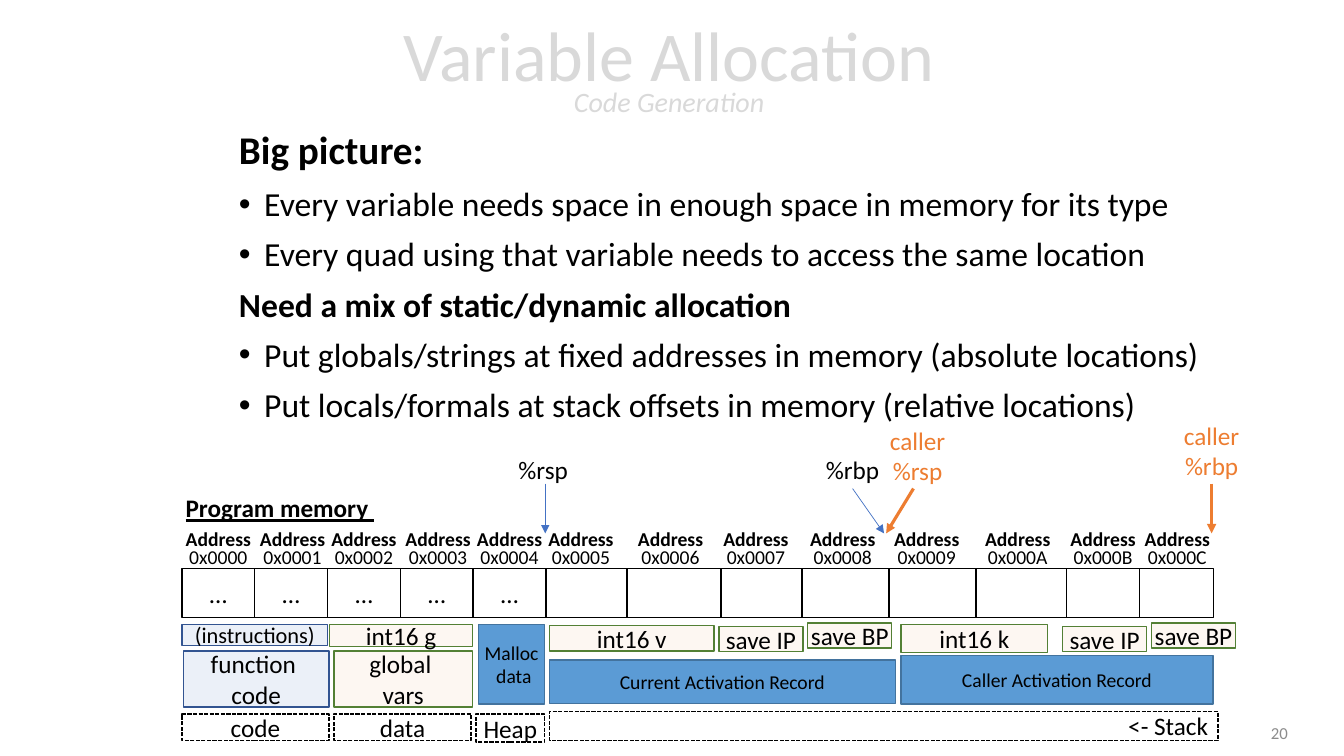
from dataclasses import dataclass

from lxml import etree
from pptx import Presentation
from pptx.dml.color import RGBColor
from pptx.enum.dml import MSO_LINE
from pptx.enum.shapes import MSO_CONNECTOR, MSO_SHAPE
from pptx.enum.text import MSO_ANCHOR, MSO_AUTO_SIZE, PP_ALIGN
from pptx.oxml.ns import qn
from pptx.util import Pt

LEFT, CENTER, RIGHT = PP_ALIGN.LEFT, PP_ALIGN.CENTER, PP_ALIGN.RIGHT
TOP, MIDDLE = MSO_ANCHOR.TOP, MSO_ANCHOR.MIDDLE
RECTANGLE, STRAIGHT = MSO_SHAPE.RECTANGLE, MSO_CONNECTOR.STRAIGHT
DASHED, FIXED_SIZE = MSO_LINE.SQUARE_DOT, MSO_AUTO_SIZE.NONE


@dataclass(frozen=True)
class Theme:
    """Hold the font, colours and type sizes of the slide."""
    font: str = "Calibri"
    ink: str = "000000"
    white: str = "FFFFFF"
    faded: str = "D9D9D9"
    number: str = "8C8C8C"
    blue: str = "4472C4"
    orange: str = "ED7D31"
    title: int = 50
    subtitle: int = 20
    heading: int = 28
    body: int = 24
    label: int = 18
    code: int = 16
    small: int = 14
    footer: int = 12


THEME = Theme()

STYLES = {
    "cell": (THEME.white, 100, THEME.ink),
    "code": (THEME.blue, 10, "325491"),
    "data": ("F4B183", 10, "538035"),
    "record": ("5B9BD5", 100, "43739E"),
    "segment": (None, 100, THEME.ink),
}

BODY = [
    ("Big picture:", True, THEME.heading),
    ("Every variable needs space in enough space in memory for its type", False, THEME.body),
    ("Every quad using that variable needs to access the same location", False, THEME.body),
    ("Need a mix of static/dynamic allocation", True, THEME.body),
    ("Put globals/strings at fixed addresses in memory (absolute locations)", False, THEME.body),
    ("Put locals/formals at stack offsets in memory (relative locations)", False, THEME.body),
]

CELL_EDGES = [130, 182, 234, 286, 338, 390, 448, 515, 573, 635, 697, 762, 814, 867]
ADDRESS_CENTERS = [156, 209, 260, 313, 364, 415, 479, 540, 602, 662, 727, 788, 841]
FILLED_CELLS = 5

MEMORY_BOXES = [
    ("code", "(instructions)", (130, 446, 104, 15), THEME.code),
    ("code", "function \ncode", (131, 465, 104, 40), THEME.label),
    ("data", "int16 g", (235.5, 446, 102, 16), THEME.label),
    ("data", "global \nvars", (238.5, 465, 99, 40), THEME.label),
    ("record", "Malloc\n data", (342, 446, 47, 57), THEME.small),
    ("record", "Current Activation Record", (392.5, 471.5, 247, 31), THEME.small),
    ("record", "Caller Activation Record", (643.5, 468, 223, 35), THEME.small),
    ("data", "int16 v", (392.5, 447, 117.5, 18), THEME.label),
    ("data", "int16 k", (643.5, 446, 105, 20), THEME.label),
    ("segment", "code", (130, 510, 105, 19), THEME.label),
    ("segment", "data", (238.5, 510, 98, 19), THEME.label),
    ("segment", "Heap", (340, 510, 49, 20), THEME.label),
]
SAVED_LEFTS = [513.5, 759]

POINTERS = [
    ("%rsp", (363, 320.5, 50, 29), (389.5, 345.5), (389.5, 381), THEME.ink),
    ("%rbp", (582.5, 320.5, 53, 29), (609, 349), (631.5, 381), THEME.ink),
    ("caller\n%rsp", (628, 300, 55, 51), (652.5, 349), (633, 381), THEME.orange),
    ("caller\n%rbp", (838, 296, 55, 51), (865.5, 345.5), (865.5, 381), THEME.orange),
]


def color(value):
    """Turn a hex string into a colour."""
    return RGBColor.from_string(value)


def place(shape, bounds):
    """Move and size a shape to bounds given in points."""
    shape.left, shape.top, shape.width, shape.height = map(Pt, bounds)


def set_font(font, size, ink, bold=False):
    """Apply the theme font with a size, colour and weight."""
    font.name, font.size, font.bold = THEME.font, Pt(size), bold
    font.color.rgb = color(ink)


def write(shape, text, size, ink=THEME.ink, align=CENTER, anchor=MIDDLE, bold=False, inset=0):
    """Fill a shape with evenly formatted paragraphs."""
    frame = shape.text_frame
    frame.text = text
    frame.word_wrap, frame.vertical_anchor = True, anchor
    frame.margin_left = frame.margin_right = Pt(inset)
    for para in frame.paragraphs:
        para.alignment = align
        set_font(para.font, size, ink, bold)


def add_label(page, text, bounds, size=THEME.label, **options):
    """Add a text box and return it."""
    box = page.shapes.add_textbox(*map(Pt, bounds))
    write(box, text, size, **options)
    return box


def add_box(page, style, text, bounds, size, **options):
    """Add a rectangle in one of the named styles."""
    fill, opacity, line = STYLES[style]
    box = page.shapes.add_shape(RECTANGLE, *map(Pt, bounds))
    box.shadow.inherit = False
    box.line.color.rgb, box.line.width = color(line), Pt(1)
    if fill is None:
        box.fill.background()
        box.line.dash_style = DASHED
    else:
        box.fill.solid()
        box.fill.fore_color.rgb = color(fill)
        if opacity < 100:
            tint = box.fill._xPr.find(qn("a:solidFill"))[0]
            etree.SubElement(tint, qn("a:alpha"), val=str(opacity * 1000))
    write(box, text, size, **options)


def add_arrow(page, start, end, ink, width):
    """Draw an arrow from start to end."""
    arrow = page.shapes.add_connector(STRAIGHT, *map(Pt, start + end))
    arrow.line.color.rgb, arrow.line.width = color(ink), Pt(width)
    etree.SubElement(arrow.line._get_or_add_ln(), qn("a:tailEnd"), type="triangle")
    etree.SubElement(arrow._element.spPr, qn("a:effectLst"))


def add_title(page):
    """Write the title and its italic second line."""
    title = page.shapes.title
    place(title, (118, 2, 720, 104.5))
    frame = title.text_frame
    frame.auto_size, frame.vertical_anchor = FIXED_SIZE, MIDDLE
    para = frame.paragraphs[0]
    para.alignment, para.line_spacing = CENTER, 0.7
    set_font(para.font, THEME.title, THEME.faded)
    para.add_run().text = "Variable Allocation"
    para.add_line_break()
    span = para.add_run()
    span.text = "Code Generation"
    span.font.size, span.font.italic = Pt(THEME.subtitle), True


def add_body(page):
    """Write the bold headings and bulleted points."""
    body = page.placeholders[1]
    place(body, (163.5, 90, 730, 323))
    frame = body.text_frame
    frame.text = "\n".join(text for text, _, _ in BODY)
    frame.auto_size = FIXED_SIZE
    for para, (_, heading, size) in zip(frame.paragraphs, BODY):
        para.alignment, para.line_spacing, para.space_before = LEFT, 0.9, Pt(10)
        set_font(para.font, size, THEME.ink, heading)
        indent = 0 if heading else Pt(18)
        props = para._p.get_or_add_pPr()
        props.set("marL", str(indent))
        props.set("indent", str(-indent))
        if heading:
            props.insert_element_before(props.makeelement(qn("a:buNone")), "a:tabLst", "a:defRPr", "a:extLst")


def add_memory(page):
    """Draw the row of memory cells with their addresses."""
    for index, (left, right) in enumerate(zip(CELL_EDGES, CELL_EDGES[1:])):
        text = "…" if index < FILLED_CELLS else ""
        add_box(page, "cell", text, (left, 406, right - left, 35), THEME.label)
        start = ADDRESS_CENTERS[index] - 28
        add_label(page, "Address", (start, 373, 56, 25), THEME.small, anchor=TOP, bold=True)
        add_label(page, f"0x{index:04X}", (start, 385.5, 56, 25), THEME.small, anchor=TOP)


def main():
    """Build the slide and save the deck."""
    deck = Presentation()
    deck.slide_width, deck.slide_height = Pt(960), Pt(540)
    page = deck.slides.add_slide(deck.slide_layouts[1])
    add_title(page)
    add_body(page)
    add_label(page, "20", (765, 509, 162, 29), THEME.footer, ink=THEME.number, align=RIGHT, inset=7.2)
    add_memory(page)
    for style, text, bounds, size in MEMORY_BOXES:
        add_box(page, style, text, bounds, size)
    for left in SAVED_LEFTS:
        add_box(page, "data", "save IP", (left, 447.5, 60, 18), THEME.label)
        add_box(page, "data", "save BP", (left + 63.5, 445, 60, 18), THEME.label)
    add_box(page, "segment", "<- Stack", (392.5, 508, 477.5, 21), THEME.label, align=RIGHT, inset=7.2)
    for text, bounds, start, end, ink in POINTERS:
        caller = ink == THEME.orange
        add_arrow(page, start, end, ink if caller else THEME.blue, 2.25 if caller else 0.5)
        add_label(page, text, bounds, ink=ink)
    heading = add_label(page, "Program memory ", (125.5, 348, 150, 29), align=LEFT, bold=True, inset=7.2)
    heading.text_frame.paragraphs[0].font.underline = True
    deck.save("out.pptx")


if __name__ == "__main__":
    main()
